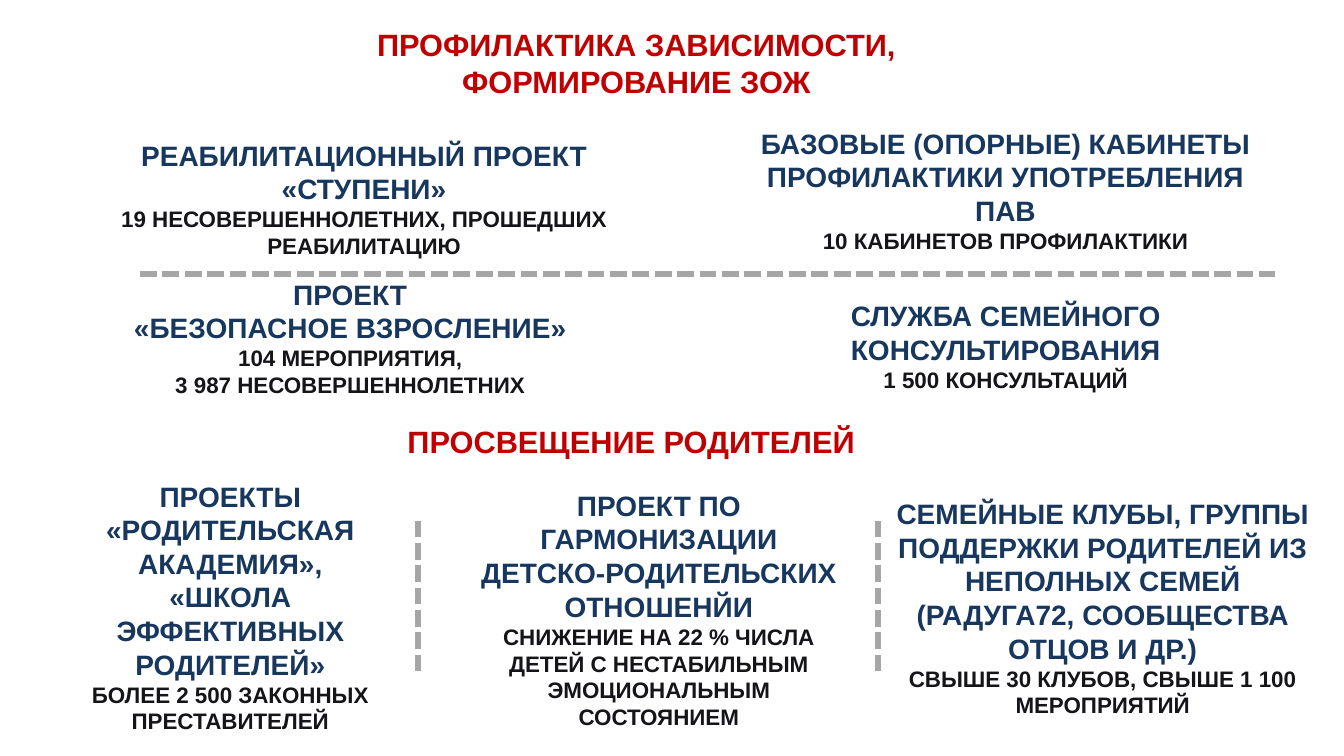
from lxml.etree import SubElement
from pptx import Presentation
from pptx.dml.color import RGBColor
from pptx.enum.dml import MSO_LINE
from pptx.enum.shapes import MSO_CONNECTOR, MSO_SHAPE
from pptx.enum.text import MSO_ANCHOR, MSO_AUTO_SIZE, PP_ALIGN
from pptx.oxml.ns import qn
from pptx.util import Cm, Pt

COLORS = {
    "heading": "C00000",
    "project": "17375E",
    "result": "141419",
    "card": "FFFFFF",
    "divider": "A6A6A6",
}
SIZES = {"heading": 22, "project": 20, "result": 16}

HEADING_FRAME = {
    "word_wrap": True,
    "auto_size": MSO_AUTO_SIZE.NONE,
    "vertical_anchor": MSO_ANCHOR.TOP,
}
CARD_FRAME = {
    "word_wrap": True,
    "vertical_anchor": MSO_ANCHOR.MIDDLE,
    "margin_left": Cm(0.51),
    "margin_top": Cm(0.13),
    "margin_right": Cm(0),
}

CARDS = [
    ((11.13, 12.62, 10.44, 5.89), 0.42,
     ["ПРОЕКТ ПО ГАРМОНИЗАЦИИ ДЕТСКО-РОДИТЕЛЬСКИХ ОТНОШЕНЙИ"],
     ["СНИЖЕНИЕ НА 22 % ЧИСЛА ДЕТЕЙ С НЕСТАБИЛЬНЫМ ЭМОЦИОНАЛЬНЫМ СОСТОЯНИЕМ"]),
    ((1.93, 6.91, 13.28, 3.61), 0.42,
     ["ПРОЕКТ", "«БЕЗОПАСНОЕ ВЗРОСЛЕНИЕ»"],
     ["104 МЕРОПРИЯТИЯ,", "3 987 НЕСОВЕРШЕННОЛЕТНИХ"]),
    ((2.24, 3.1, 13.36, 3.81), 0,
     ["РЕАБИЛИТАЦИОННЫЙ ПРОЕКТ «СТУПЕНИ»"],
     ["19 НЕСОВЕРШЕННОЛЕТНИХ, ПРОШЕДШИХ РЕАБИЛИТАЦИЮ"]),
    ((18.24, 3.1, 13.69, 3.38), 0,
     ["БАЗОВЫЕ (ОПОРНЫЕ) КАБИНЕТЫ ПРОФИЛАКТИКИ УПОТРЕБЛЕНИЯ ПАВ"],
     ["10 КАБИНЕТОВ ПРОФИЛАКТИКИ"]),
    ((19.3, 7.52, 11.58, 2.39), 0,
     ["СЛУЖБА СЕМЕЙНОГО КОНСУЛЬТИРОВАНИЯ"],
     ["1 500 КОНСУЛЬТАЦИЙ"]),
    ((0.56, 12.4, 9.98, 6.43), 0.65,
     ["ПРОЕКТЫ «РОДИТЕЛЬСКАЯ АКАДЕМИЯ»,", "«ШКОЛА ЭФФЕКТИВНЫХ РОДИТЕЛЕЙ»"],
     ["БОЛЕЕ 2 500 ЗАКОННЫХ ПРЕСТАВИТЕЛЕЙ"]),
    ((21.59, 12.4, 11.89, 5.82), 0,
     ["СЕМЕЙНЫЕ КЛУБЫ, ГРУППЫ ПОДДЕРЖКИ РОДИТЕЛЕЙ ИЗ НЕПОЛНЫХ СЕМЕЙ "
      "(РАДУГА72, СООБЩЕСТВА ОТЦОВ И ДР.)"],
     ["СВЫШЕ 30 КЛУБОВ, СВЫШЕ 1 100 МЕРОПРИЯТИЙ"]),
]
DIVIDERS = [
    (3.53, 6.91, 32.13, 6.91),
    (10.54, 16.92, 10.54, 13.13),
    (22.12, 16.92, 22.12, 13.13),
]


def apply_format(target, values):
    """Set every attribute in values on the target."""
    for attribute, value in values.items():
        setattr(target, attribute, value)


def write_lines(frame, lines):
    """Fill a text frame with centred bold paragraphs given as (role, text)."""
    for index, (role, text) in enumerate(lines):
        paragraph = frame.paragraphs[0] if index == 0 else frame.add_paragraph()
        paragraph.alignment = PP_ALIGN.CENTER
        run = paragraph.add_run()
        run.text = text
        apply_format(run.font, {"name": "Arial", "size": Pt(SIZES[role]), "bold": True})
        run.font.color.rgb = RGBColor.from_string(COLORS[role])


def format_heading(heading, text, box):
    """Place a section heading and write its text."""
    apply_format(heading, dict(zip(("left", "top", "width", "height"), map(Cm, box))))
    apply_format(heading.text_frame, HEADING_FRAME)
    write_lines(heading.text_frame, [("heading", text)])


def add_card(slide, box, bottom_gap, projects, results):
    """Add a rounded card with project names above their results."""
    card = slide.shapes.add_shape(MSO_SHAPE.ROUNDED_RECTANGLE, *map(Cm, box))
    card.adjustments[0] = 0.207
    card.shadow.inherit = False
    card.fill.solid()
    card.fill.fore_color.rgb = RGBColor.from_string(COLORS["card"])
    card.line.fill.background()
    apply_format(card.text_frame, {**CARD_FRAME, "margin_bottom": Cm(0.13 + bottom_gap)})
    write_lines(card.text_frame,
                [("project", text) for text in projects]
                + [("result", text) for text in results])


def add_divider(slide, ends):
    """Add a dashed grey line between two points."""
    divider = slide.shapes.add_connector(MSO_CONNECTOR.STRAIGHT, *map(Cm, ends))
    divider.line.color.rgb = RGBColor.from_string(COLORS["divider"])
    apply_format(divider.line, {"width": Pt(4), "dash_style": MSO_LINE.SQUARE_DOT})
    SubElement(divider.line._get_or_add_ln().getparent(), qn("a:effectLst"))


def main():
    """Build the slide and save it."""
    deck = Presentation()
    apply_format(deck, {"slide_width": Cm(33.87), "slide_height": Cm(19.05)})
    slide = deck.slides.add_slide(deck.slide_layouts[5])
    format_heading(slide.shapes.title, "ПРОФИЛАКТИКА ЗАВИСИМОСТИ, ФОРМИРОВАНИЕ ЗОЖ",
                   (9.14, 0.53, 13.79, 2.13))
    for card in CARDS:
        add_card(slide, *card)
    parents_box = (9.49, 10.52, 12.83, 1.19)
    parents_heading = slide.shapes.add_textbox(*map(Cm, parents_box))
    format_heading(parents_heading, "ПРОСВЕЩЕНИЕ РОДИТЕЛЕЙ", parents_box)
    for ends in DIVIDERS:
        add_divider(slide, ends)
    deck.save("out.pptx")


if __name__ == "__main__":
    main()
